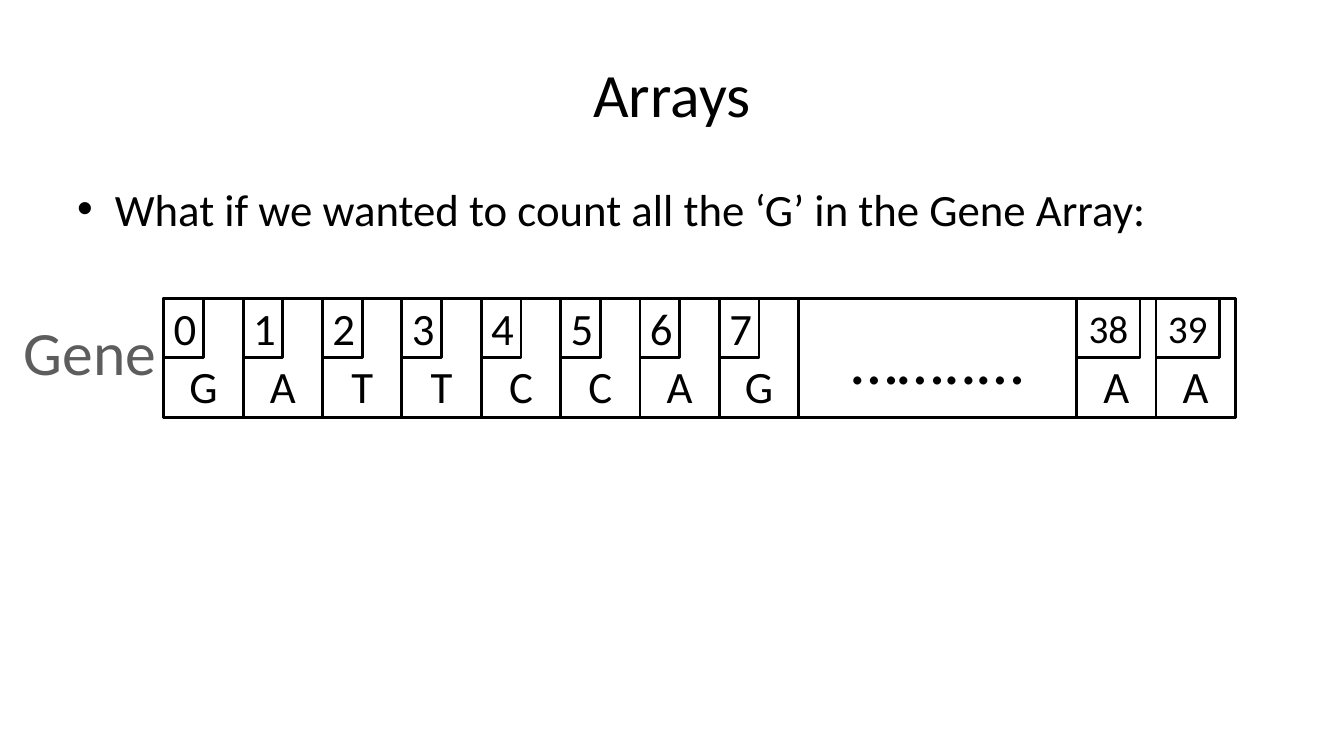
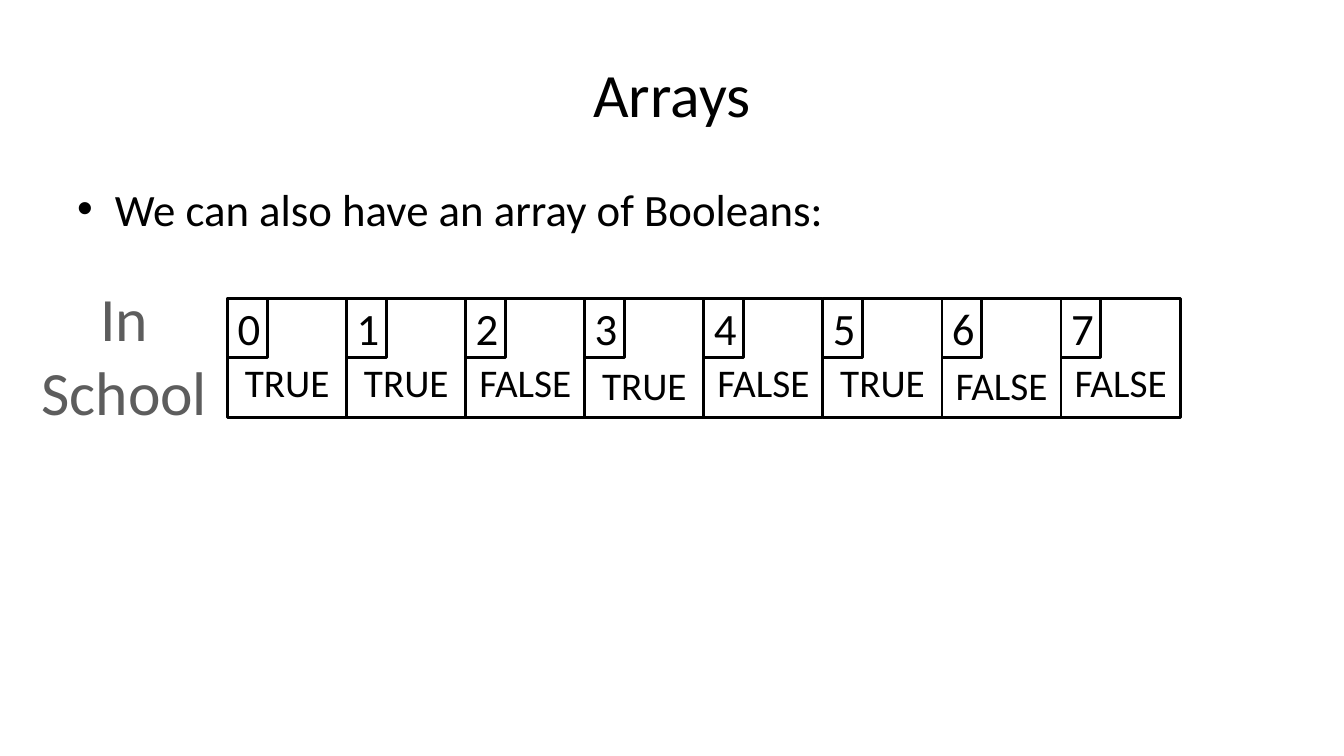
"""Build two slides that draw arrays as rows of numbered cells."""
from lxml.etree import SubElement
from pptx import Presentation
from pptx.dml.color import RGBColor
from pptx.enum.shapes import MSO_SHAPE
from pptx.enum.text import MSO_ANCHOR, PP_ALIGN
from pptx.oxml.ns import qn
from pptx.util import Pt

FONT, BLACK, GRAY = "Calibri", "000000", "5D5D5D"
PITCH, TOP = 56.7, 213
HEIGHT = 1.5 * PITCH


def write(sp, text, size=32, color=BLACK, align=PP_ALIGN.CENTER,
          anchor=MSO_ANCHOR.MIDDLE, wrap=True, bottom=3.6):
    tf = sp.text_frame
    tf.word_wrap, tf.vertical_anchor, tf.margin_bottom = wrap, anchor, Pt(bottom)
    tf.text = text
    for p in tf.paragraphs:
        p.alignment = align
        for r in p.runs:
            r.font.name, r.font.size = FONT, Pt(size)
            r.font.color.rgb = RGBColor.from_string(color)
    return tf


def box(s, x, w, h, text="", **fmt):
    sp = s.shapes.add_shape(MSO_SHAPE.RECTANGLE, Pt(x), Pt(TOP), Pt(w), Pt(h))
    sp.shadow.inherit = False
    sp.fill.background()
    sp.line.color.rgb = RGBColor.from_string(BLACK)
    sp.line.width = Pt(2)
    if text:
        write(sp, text, **fmt)


prs = Presentation()
prs.slide_width, prs.slide_height = Pt(960), Pt(540)

slides = []
for bullet, label, label_box in [
    ("What if we wanted to count all the ‘G’ in the Gene Array:",
     "Gene", (9.4, 221, 110, 60.5)),
    ("We can also have an array of Booleans:",
     "In\nSchool", (21.6, 196.6, 134.6, 113.8)),
]:
    s = prs.slides.add_slide(prs.slide_layouts[5])
    title = s.shapes.title
    title.left, title.top, title.width, title.height = Pt(48), Pt(21.6), Pt(864), Pt(90)
    write(title, "Arrays", size=44)

    body = s.shapes.add_textbox(Pt(48), Pt(126), Pt(864), Pt(356.4))
    tf = write(body, bullet, align=PP_ALIGN.LEFT, anchor=MSO_ANCHOR.TOP)
    pPr = tf.paragraphs[0]._p.get_or_add_pPr()
    pPr.set("marL", str(Pt(27)))
    pPr.set("indent", str(Pt(-27)))
    SubElement(pPr, qn("a:buFont"), typeface="Arial")
    SubElement(pPr, qn("a:buChar"), char="•")

    name = s.shapes.add_textbox(*map(Pt, label_box))
    write(name, label, size=44, color=GRAY, anchor=MSO_ANCHOR.TOP, wrap=False)
    slides.append(s)

gene, school = slides

left = 117
box(gene, left, 13.5 * PITCH, HEIGHT)
box(gene, left + 8 * PITCH, 3.5 * PITCH, HEIGHT, "……..…", size=48)
columns = [*range(8), 11.5, 12.5]
indexes = [*range(8), 38, 39]
for column, index, base in zip(columns, indexes, "GATTCCAGAA"):
    x = left + column * PITCH
    wide = index > 9
    box(gene, x, PITCH, HEIGHT, base, anchor=MSO_ANCHOR.BOTTOM)
    box(gene, x, PITCH * (0.8 if wide else 0.5), HEIGHT / 2, str(index),
        size=28 if wide else 32)

left = 162.6
for index, enrolled in enumerate([True, True, False, True, False, True, False, False]):
    x = left + index * HEIGHT
    box(school, x, HEIGHT, HEIGHT, str(enrolled).upper(), size=28,
        anchor=MSO_ANCHOR.BOTTOM, bottom=6 if index in (3, 6) else 8.4)
    box(school, x, PITCH / 2, HEIGHT / 2, str(index))

prs.save("out.pptx")
